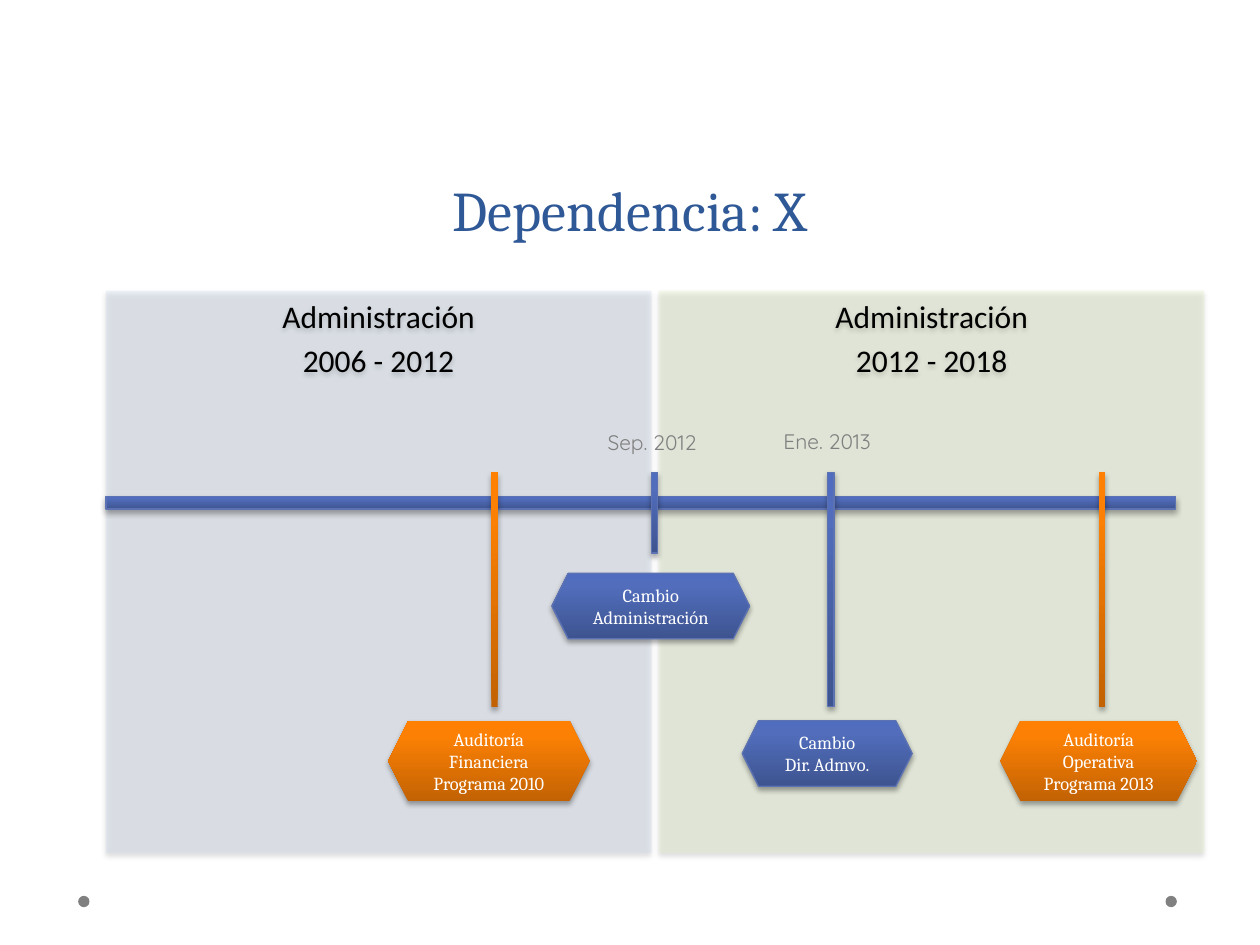
from copy import deepcopy

from lxml import etree
from pptx import Presentation
from pptx.dml.color import RGBColor
from pptx.enum.shapes import MSO_SHAPE as Shape
from pptx.enum.text import MSO_ANCHOR as Anchor, PP_ALIGN as Align
from pptx.oxml.ns import qn
from pptx.util import Inches, Pt

BLACK = RGBColor(0x00, 0x00, 0x00)
WHITE = RGBColor(0xFF, 0xFF, 0xFF)
GRAY = RGBColor(0x80, 0x80, 0x80)
TITLE_BLUE = RGBColor(0x2F, 0x58, 0x97)
PANEL_BLUE = RGBColor(0xCF, 0xDC, 0xF0)
PANEL_GREEN = RGBColor(0xE3, 0xF2, 0xC7)
EDGE_BLUE = RGBColor(0x5C, 0x72, 0xB2)
BLUE_STOPS = [(0, RGBColor(0x3E, 0x54, 0x90)), (0.8, RGBColor(0x51, 0x6D, 0xBB)),
              (1, RGBColor(0x4F, 0x6C, 0xBE))]
ORANGE_STOPS = [(0, RGBColor(0xC2, 0x62, 0x03)), (0.8, RGBColor(0xFB, 0x80, 0x04)),
                (1, RGBColor(0xFF, 0x80, 0x02))]


class TimelineSlide:
    """Holds the current slide and the style of its elements."""
    title_font = "Cambria"
    panel_font = "Calibri"
    date_font = "Quicksand"

    def __init__(self, presentation):
        self.slide = presentation.slides.add_slide(presentation.slide_layouts[5])

    def set_text(self, shape, lines, font_name, size, color, gap=0):
        frame = shape.text_frame
        frame.word_wrap = True
        for index, line in enumerate(lines):
            paragraph = frame.add_paragraph() if index else frame.paragraphs[0]
            paragraph.text = line
            paragraph.alignment = Align.CENTER
            paragraph.space_before = Pt(gap if index else 0)
            paragraph.font.name = font_name
            paragraph.font.size = Pt(size)
            paragraph.font.color.rgb = color
        return frame

    def add_shadow(self, shape, opacity, distance):
        effects = shape._element.spPr.find(qn("a:effectLst"))
        shadow = etree.SubElement(effects, qn("a:outerShdw"), blurRad=str(Pt(3.1)),
                                  dist=str(Pt(distance)), dir="5400000", rotWithShape="0")
        color = etree.SubElement(shadow, qn("a:srgbClr"), val=str(BLACK))
        etree.SubElement(color, qn("a:alpha"), val=str(opacity * 1000))

    def shape(self, kind, left, top, width, height):
        shape = self.slide.shapes.add_shape(
            kind, Inches(left), Inches(top), Inches(width), Inches(height))
        shape.shadow.inherit = False
        shape.line.fill.background()
        return shape

    def title(self, text):
        title = self.slide.shapes.title
        title.left, title.top = Inches(0.5), Inches(1.61)
        title.width, title.height = Inches(9), Inches(0.37)
        frame = self.set_text(title, [text], self.title_font, 32, TITLE_BLUE)
        frame.vertical_anchor = Anchor.BOTTOM
        frame.paragraphs[0].line_spacing = Pt(58)

    def dot(self, left):
        dot = self.shape(Shape.OVAL, left, 7.11, 0.09, 0.09)
        dot.fill.solid()
        dot.fill.fore_color.rgb = GRAY

    def panel(self, left, color, lines):
        panel = self.shape(Shape.RECTANGLE, left, 2.31, 4.33, 4.46)
        panel.fill.solid()
        panel.fill.fore_color.rgb = color
        fill_color = panel._element.spPr.find(qn("a:solidFill"))[0]
        etree.SubElement(fill_color, qn("a:alpha"), val="33000")
        self.add_shadow(panel, 38, 1.6)
        frame = self.set_text(panel, lines, self.panel_font, 18, BLACK, gap=3.6)
        frame.vertical_anchor = Anchor.TOP

    def glossy(self, kind, left, top, width, height, stops):
        shape = self.shape(kind, left, top, width, height)
        shape.fill.gradient()
        shape.fill.gradient_angle = 90
        stop_list = shape._element.spPr.find(".//" + qn("a:gsLst"))
        stop_list.append(deepcopy(stop_list[-1]))
        for stop, (position, color) in zip(shape.fill.gradient_stops, stops):
            stop.position = position
            stop.color.rgb = color
        if stops is BLUE_STOPS:
            shape.line.color.rgb = EDGE_BLUE
            shape.line.width = Pt(0.75)
        self.add_shadow(shape, 35, 1.8)
        return shape

    def event(self, tick_left, tick_height, box, stops, lines):
        self.glossy(Shape.RECTANGLE, tick_left, 3.75, 0.05, tick_height, stops)
        hexagon = self.glossy(Shape.HEXAGON, *box, stops)
        frame = self.set_text(hexagon, lines, self.title_font, 10.5, WHITE)
        frame.vertical_anchor = Anchor.MIDDLE

    def date(self, left, top, text):
        box = self.slide.shapes.add_textbox(
            Inches(left), Inches(top), Inches(0.99), Inches(0.27))
        self.set_text(box, [text], self.date_font, 12, GRAY)


def main():
    presentation = Presentation()
    presentation.slide_width, presentation.slide_height = Inches(10), Inches(7.5)
    page = TimelineSlide(presentation)

    # Footer dots and title
    for left in (9.25, 0.62):
        page.dot(left)
    page.title("Dependencia: X")

    # One panel per administration
    page.panel(0.84, PANEL_BLUE, ["Administración", "2006 - 2012"])
    page.panel(5.23, PANEL_GREEN, ["Administración", "2012 - 2018"])

    # Time axis
    page.glossy(Shape.RECTANGLE, 0.84, 3.94, 8.49, 0.1, BLUE_STOPS)

    # Events: tick left, tick height, hexagon box, gradient, text
    events = [
        (5.17, 0.64, (4.38, 4.55, 1.57, 0.52), BLUE_STOPS, ["Cambio", "Administración"]),
        (6.57, 1.86, (5.89, 5.72, 1.35, 0.52), BLUE_STOPS, ["Cambio", "Dir. Admvo."]),
        (3.9, 1.86, (3.08, 5.72, 1.6, 0.64), ORANGE_STOPS,
         ["Auditoría Financiera", "Programa 2010"]),
        (8.72, 1.86, (7.94, 5.72, 1.56, 0.64), ORANGE_STOPS,
         ["Auditoría Operativa", "Programa 2013"]),
    ]
    for event in events:
        page.event(*event)

    # Dates above the ticks
    page.date(4.68, 3.36, "Sep. 2012")
    page.date(6.07, 3.35, "Ene. 2013")

    presentation.save("out.pptx")


if __name__ == "__main__":
    main()
